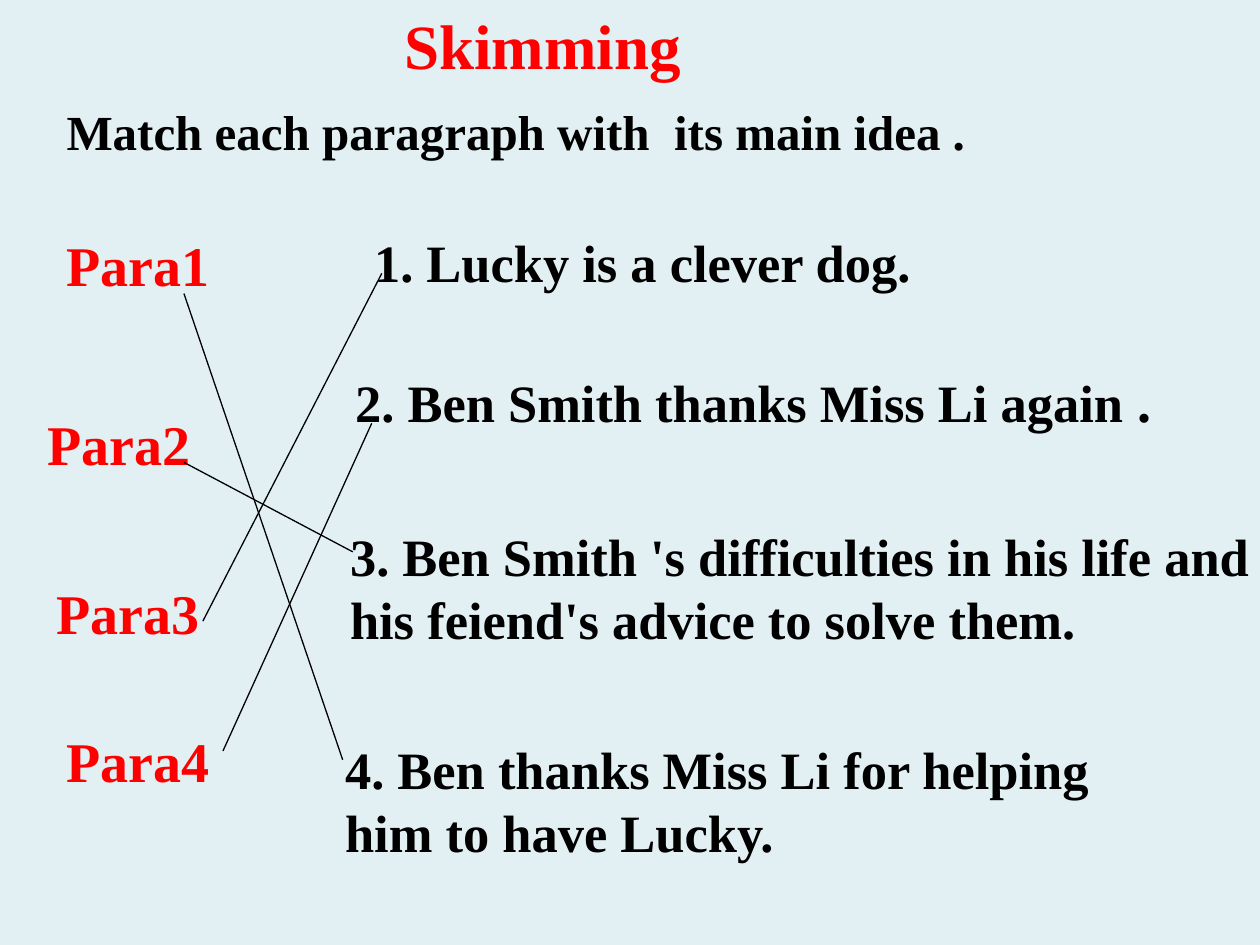
"""Build a skimming exercise that matches paragraphs with their main ideas."""
from typing import NamedTuple

from lxml import etree
from pptx import Presentation
from pptx.dml.color import RGBColor
from pptx.enum.shapes import MSO_CONNECTOR
from pptx.enum.text import MSO_AUTO_SIZE
from pptx.oxml.ns import qn
from pptx.util import Inches, Pt

STRAIGHT = MSO_CONNECTOR.STRAIGHT
FIT_SHAPE = MSO_AUTO_SIZE.SHAPE_TO_FIT_TEXT
FONT = "Times New Roman"
RED, BLACK, PALE_BLUE = "FF0000", "000000", "E3F0F3"
LABEL_SIZE, IDEA_SIZE = 32, 30


class Entry(NamedTuple):
    """A text and its box in inches, with an optional larger ending."""
    text: str
    left: float
    top: float
    width: float
    height: float
    ending: str = ""


class Match(NamedTuple):
    """A line in inches from a paragraph label to its main idea."""
    start: tuple[float, float]
    end: tuple[float, float]


TITLE = Entry("Skimming", 3.11, 0, 3.31, 0.71)
TASK = Entry("Match each paragraph with  its main idea .", 0.43, 0.76, 8.98, 0.57)
LABELS = [
    Entry("Para1", 0.43, 1.78, 1.57, 0.64),
    Entry("Para2", 0.28, 3.2, 1.5, 0.64),
    Entry("Para3", 0.35, 4.54, 1.57, 0.64),
    Entry("Para4", 0.43, 5.72, 1.5, 0.64),
]
IDEAS = [
    Entry("1. Lucky is a clever dog.", 2.87, 1.78, 7.01, 0.6),
    Entry("2. Ben Smith thanks Miss Li again", 2.72, 2.86, 7.32, 0.64, " ."),
    Entry("3. Ben Smith 's difficulties in his life and his feiend's advice to solve them.",
          2.68, 4.11, 7.4, 1.11),
    Entry("4. Ben thanks Miss Li for helping him to have Lucky.", 2.64, 5.8, 6.61, 1.11),
]
MATCHES = [
    Match((1.46, 2.33), (2.72, 6.03)),
    Match((1.46, 3.67), (2.8, 4.38)),
    Match((1.61, 4.93), (3.03, 2.17)),
    Match((1.77, 5.96), (2.95, 3.36)),
]


def rgb(code: str) -> RGBColor:
    """Turn a hex string into a colour."""
    return RGBColor.from_string(code)


def add_run(paragraph, text: str, *, size: float, color: str = BLACK) -> None:
    """Append bold text in the given format to a paragraph."""
    run = paragraph.add_run()
    run.text = text
    run.font.name = FONT
    run.font.size = Pt(size)
    run.font.bold = True
    run.font.color.rgb = rgb(color)


def add_entry(slide, entry: Entry, *, size: float, color: str = BLACK) -> None:
    """Add a wrapped text box for one entry."""
    box = slide.shapes.add_textbox(Inches(entry.left), Inches(entry.top),
                                   Inches(entry.width), Inches(entry.height))
    frame = box.text_frame
    frame.word_wrap = True
    frame.auto_size = FIT_SHAPE
    paragraph = frame.paragraphs[0]
    add_run(paragraph, entry.text, size=size, color=color)
    if entry.ending:
        add_run(paragraph, entry.ending, size=LABEL_SIZE, color=color)


def add_match(slide, match: Match) -> None:
    """Draw a thin line between a label and its idea."""
    ends = [Inches(value) for value in (*match.start, *match.end)]
    line = slide.shapes.add_connector(STRAIGHT, *ends)
    line.line.color.rgb = rgb(BLACK)
    line.line.width = Pt(0.75)
    etree.SubElement(line.element.spPr, qn("a:effectLst"))


def main() -> None:
    """Build and save the slide."""
    deck = Presentation()
    deck.slide_width, deck.slide_height = Inches(10), Inches(7.5)
    slide = deck.slides.add_slide(deck.slide_layouts[6])
    background = slide.background.fill
    background.solid()
    background.fore_color.rgb = rgb(PALE_BLUE)

    add_entry(slide, TITLE, size=36, color=RED)
    add_entry(slide, TASK, size=28)
    for label in LABELS:
        add_entry(slide, label, size=LABEL_SIZE, color=RED)
    for idea in IDEAS:
        add_entry(slide, idea, size=IDEA_SIZE)
    for match in MATCHES:
        add_match(slide, match)
    deck.save("out.pptx")


if __name__ == "__main__":
    main()
